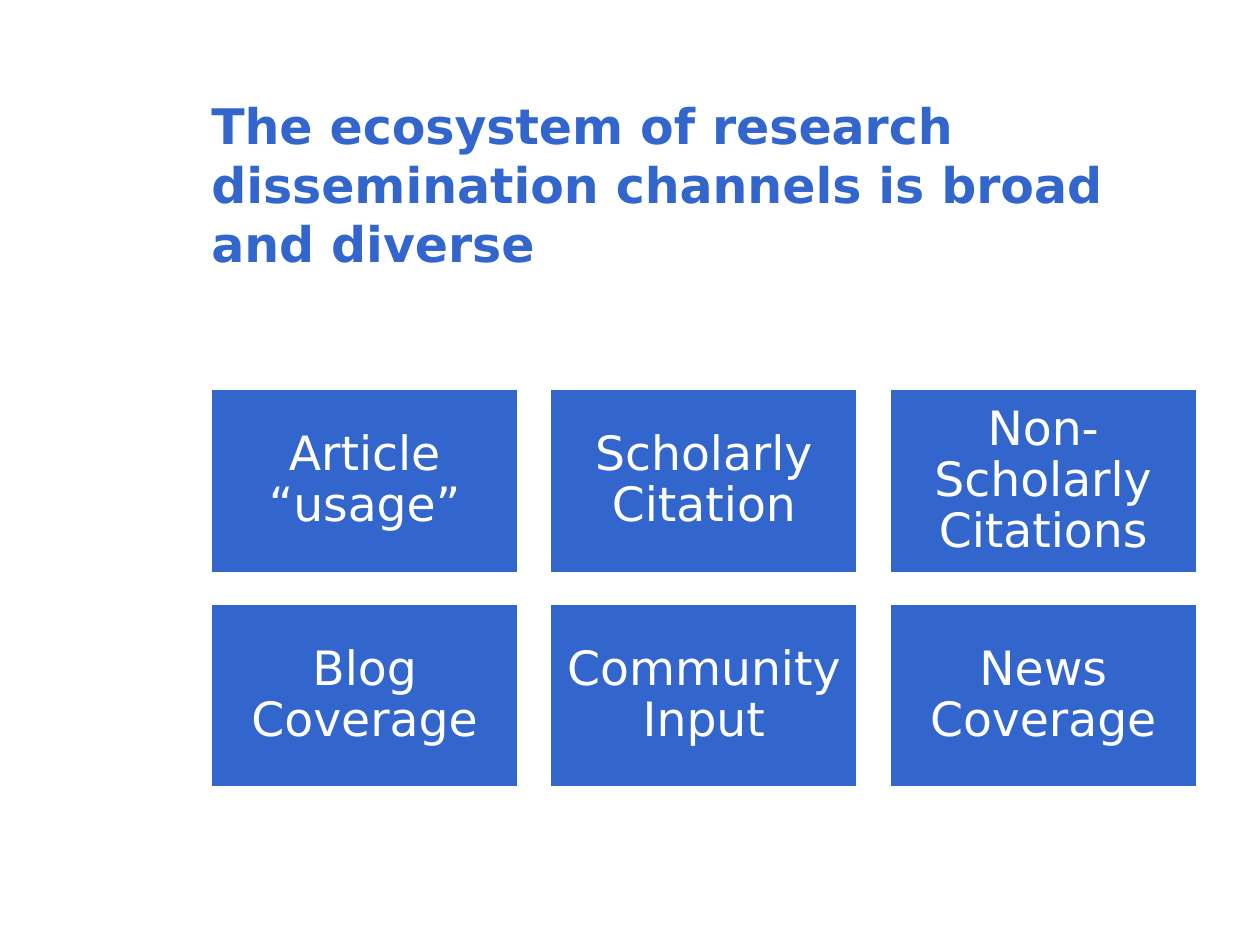
from pptx import Presentation
from pptx.dml.color import RGBColor
from pptx.enum.shapes import MSO_SHAPE
from pptx.enum.text import MSO_ANCHOR, PP_ALIGN
from pptx.util import Cm, Pt

BLUE = RGBColor(0x33, 0x66, 0xCC)
WHITE = RGBColor(0xFF, 0xFF, 0xFF)
FONT = "DejaVu Sans"

CHANNELS = [
    ["Article “usage”", "Scholarly Citation", "Non-Scholarly Citations"],
    ["Blog Coverage", "Community Input", "News Coverage"],
]
LEFT, TOP = 4.24, 7.83
WIDTH, HEIGHT = 6.22, 3.73
COLUMN_STEP, ROW_STEP = 6.84, 4.33


def style_text(frame, text, size, color):
    frame.word_wrap = True
    frame.vertical_anchor = MSO_ANCHOR.MIDDLE
    paragraph = frame.paragraphs[0]
    paragraph.text = text
    paragraph.font.name = FONT
    paragraph.font.size = Pt(size)
    paragraph.font.color.rgb = color
    return paragraph


prs = Presentation()
prs.slide_width, prs.slide_height = Cm(25.4), Cm(19.05)
slide = prs.slides.add_slide(prs.slide_layouts[6])

title = slide.shapes.add_textbox(Cm(4.01), Cm(2.12), Cm(19.48), Cm(3.18))
heading = style_text(
    title.text_frame,
    "The ecosystem of research dissemination channels is broad and diverse",
    28, BLUE)
heading.font.bold = True

for row, names in enumerate(CHANNELS):
    for column, name in enumerate(names):
        tile = slide.shapes.add_shape(
            MSO_SHAPE.RECTANGLE,
            Cm(LEFT + column * COLUMN_STEP), Cm(TOP + row * ROW_STEP),
            Cm(WIDTH), Cm(HEIGHT))
        tile.shadow.inherit = False
        tile.fill.solid()
        tile.fill.fore_color.rgb = BLUE
        tile.line.color.rgb = WHITE
        tile.line.width = Pt(2)

        frame = tile.text_frame
        frame.margin_left = frame.margin_right = Cm(0.28)
        frame.margin_top = frame.margin_bottom = Cm(0.28)
        label = style_text(frame, name, 27, WHITE)
        label.alignment = PP_ALIGN.CENTER
        label.line_spacing = 0.9

prs.save("out.pptx")
